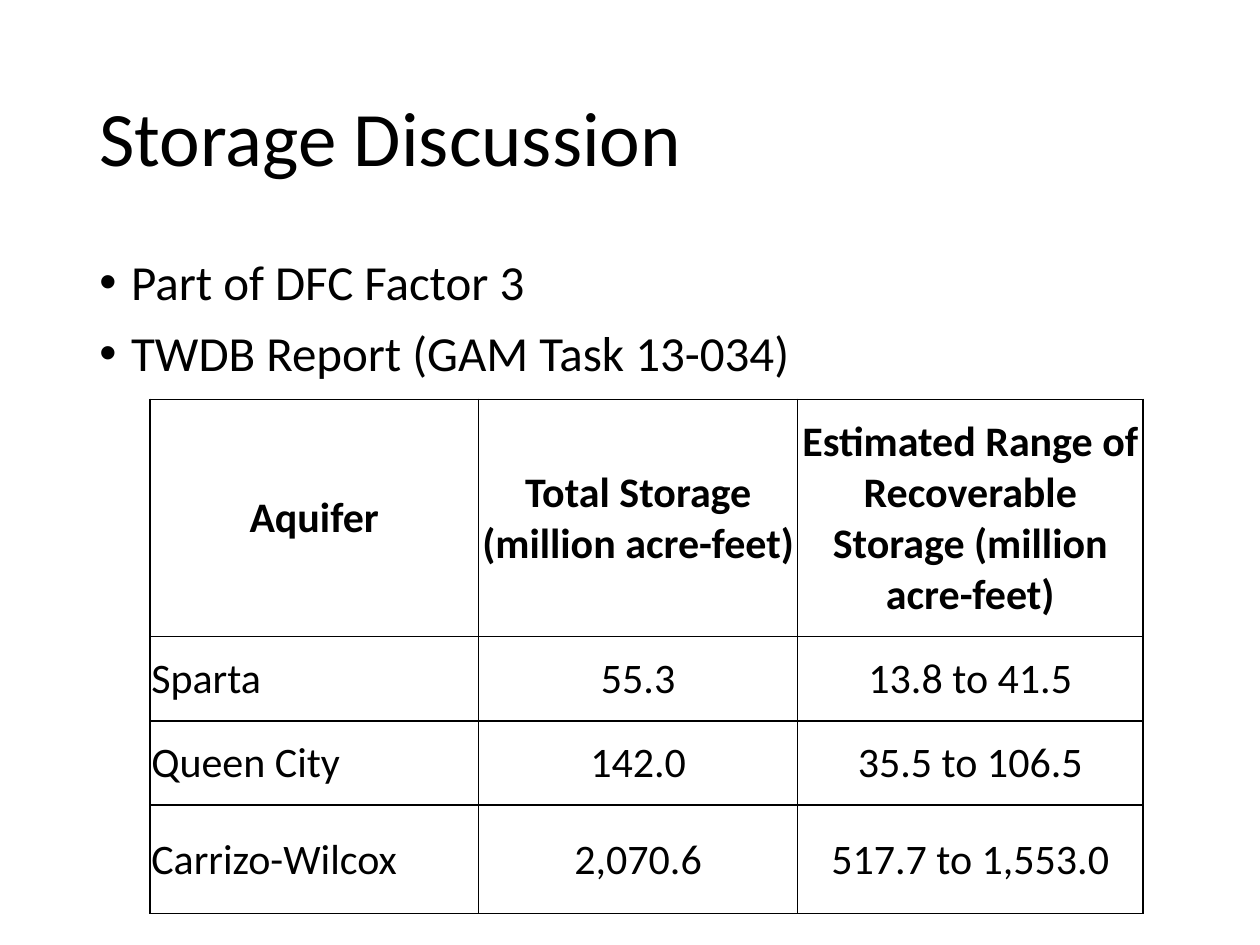
from lxml.etree import SubElement
from pptx import Presentation
from pptx.dml.color import RGBColor
from pptx.enum.text import MSO_ANCHOR, MSO_AUTO_SIZE, PP_ALIGN
from pptx.oxml.ns import qn
from pptx.util import Cm, Pt

INK = "000000"
TOPICS = ["Part of DFC Factor 3", "TWDB Report (GAM Task 13-034)"]
STORAGE = [
    ["Aquifer", "Total Storage (million acre-feet)",
     "Estimated Range of Recoverable Storage (million acre-feet)"],
    ["Sparta", "55.3", "13.8 to 41.5"],
    ["Queen City", "142.0", "35.5 to 106.5"],
    ["Carrizo-Wilcox", "2,070.6", "517.7 to 1,553.0"],
]
COLUMN_WIDTHS = [6.63, 6.43, 6.96]
ROW_HEIGHTS = [4.78, 1.7, 1.7, 2.18]


def colour(value):
    return RGBColor.from_string(value)


def apply(target, values):
    for name, value in values.items():
        setattr(target, name, value)


class StorageSlide:
    font = "Calibri"
    cell_format = {
        "vertical_anchor": MSO_ANCHOR.MIDDLE,
        "margin_left": Cm(0.03),
        "margin_right": Cm(0.03),
        "margin_top": Cm(0.03),
        "margin_bottom": 0,
    }

    def __init__(self, deck):
        self.slide = deck.slides.add_slide(deck.slide_layouts[1])

    def add_text(self, paragraph, text, size, bold=False, **layout):
        run = paragraph.add_run()
        run.text = text
        apply(run.font, {"name": self.font, "size": Pt(size), "bold": bold})
        run.font.color.rgb = colour(INK)
        apply(paragraph, layout)

    def place(self, placeholder, left, top, width, height, anchor):
        apply(placeholder, {"left": Cm(left), "top": Cm(top),
                            "width": Cm(width), "height": Cm(height)})
        frame = placeholder.text_frame
        apply(frame, {"word_wrap": True, "auto_size": MSO_AUTO_SIZE.NONE,
                      "vertical_anchor": anchor})
        return frame

    def title(self, text, *box):
        frame = self.place(self.slide.shapes.title, *box, MSO_ANCHOR.MIDDLE)
        self.add_text(frame.paragraphs[0], text, 44,
                      alignment=PP_ALIGN.LEFT, line_spacing=0.9)

    def bullets(self, topics, *box):
        frame = self.place(self.slide.placeholders[1], *box, MSO_ANCHOR.TOP)
        for index, topic in enumerate(topics):
            paragraph = frame.add_paragraph() if index else frame.paragraphs[0]
            self.add_text(paragraph, topic, 28,
                          line_spacing=0.9, space_before=Pt(10))
            properties = paragraph._p.get_or_add_pPr()
            properties.set("marL", str(Cm(0.64)))
            properties.set("indent", str(-Cm(0.64)))
            SubElement(properties, qn("a:buFont"), typeface="Arial")
            SubElement(properties, qn("a:buChar"), char="•")

    def borders(self, cell):
        properties = cell._tc.get_or_add_tcPr()
        for side in "LRTB":
            line = SubElement(properties, qn(f"a:ln{side}"), w=str(Pt(1)))
            fill = SubElement(line, qn("a:solidFill"))
            SubElement(fill, qn("a:srgbClr"), val=INK)

    def table(self, rows, left, top, widths, heights):
        table = self.slide.shapes.add_table(
            len(rows), len(widths), Cm(left), Cm(top),
            Cm(sum(widths)), Cm(sum(heights))).table
        table.horz_banding = False
        for column, width in zip(table.columns, widths):
            column.width = Cm(width)
        for r, (row, height) in enumerate(zip(rows, heights)):
            table.rows[r].height = Cm(height)
            for c, text in enumerate(row):
                cell = table.cell(r, c)
                apply(cell, self.cell_format)
                self.borders(cell)
                cell.fill.background()
                is_name = r > 0 and c == 0
                self.add_text(cell.text_frame.paragraphs[0], text, 24, r == 0,
                              alignment=PP_ALIGN.LEFT if is_name else PP_ALIGN.CENTER)


def main():
    deck = Presentation()
    apply(deck, {"slide_width": Cm(25.4), "slide_height": Cm(19.05)})
    storage = StorageSlide(deck)
    storage.title("Storage Discussion", 1.75, 1.02, 21.89, 3.68)
    storage.bullets(TOPICS, 1.75, 5.08, 21.89, 12.09)
    storage.table(STORAGE, 3.02, 8.05, COLUMN_WIDTHS, ROW_HEIGHTS)
    deck.save("out.pptx")


if __name__ == "__main__":
    main()
